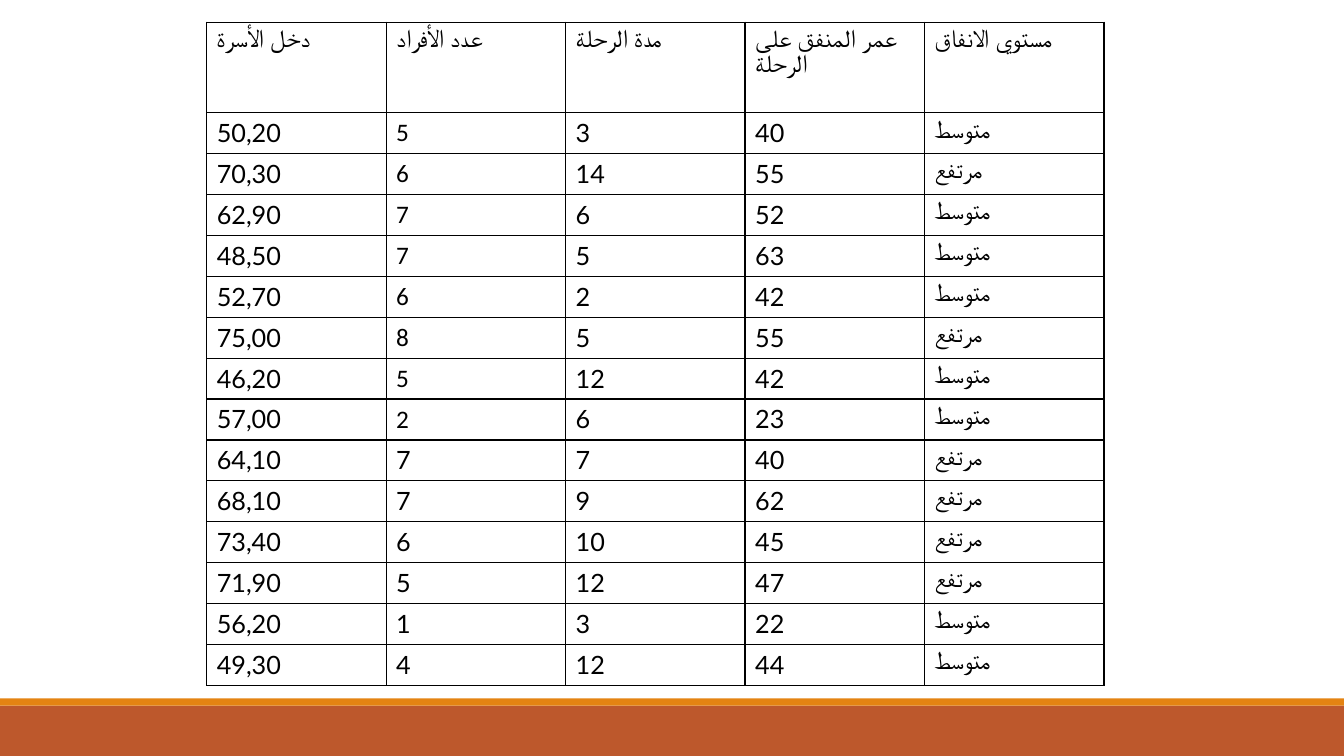
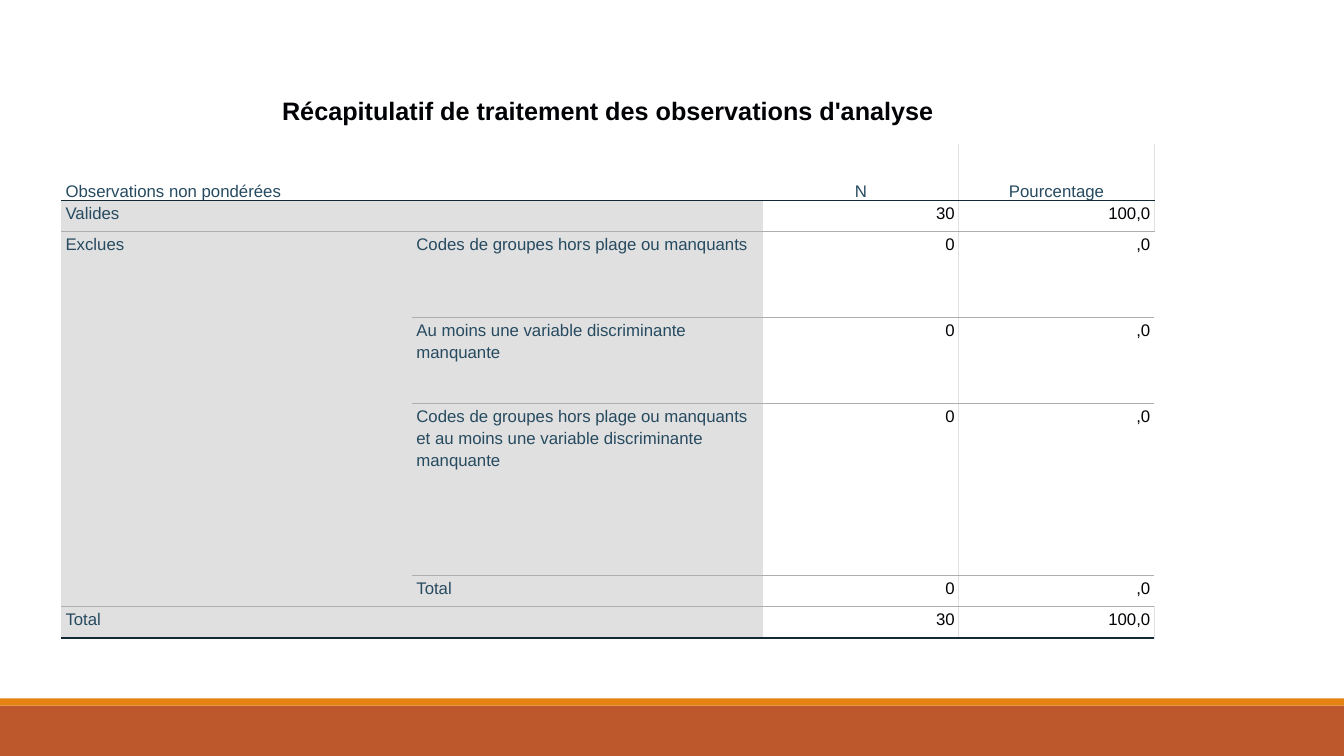
import pptx
import pptx.dml.color
import pptx.enum.shapes
import pptx.enum.text
import pptx.oxml
import pptx.oxml.ns
import pptx.util
from lxml import etree

Inches = pptx.util.Inches
Pt = pptx.util.Pt
qn = pptx.oxml.ns.qn
ALIGN = pptx.enum.text.PP_ALIGN
ANCHOR = pptx.enum.text.MSO_ANCHOR

COLORS = {
    "white": "FFFFFF",
    "black": "000000",
    "band": "BD582C",
    "stripe": "E48312",
    "ink": "010205",
    "label": "264A60",
    "stub": "E0E0E0",
    "rule": "AEAEAE",
    "dark_rule": "152935",
}
PLAIN_TABLE = "{2D5ABB26-0587-4C30-8999-92F81FD0307C}"

TRIP_HEADER = ["دخل الأسرة", "عدد الأفراد", "مدة الرحلة", "عمر المنفق على الرحلة", "مستوي الانفاق"]
MEDIUM, HIGH = "متوسط", "مرتفع"
TRIP_ROWS = [
    ["50,20", "5", "3", "40", MEDIUM],
    ["70,30", "6", "14", "55", HIGH],
    ["62,90", "7", "6", "52", MEDIUM],
    ["48,50", "7", "5", "63", MEDIUM],
    ["52,70", "6", "2", "42", MEDIUM],
    ["75,00", "8", "5", "55", HIGH],
    ["46,20", "5", "12", "42", MEDIUM],
    ["57,00", "2", "6", "23", MEDIUM],
    ["64,10", "7", "7", "40", HIGH],
    ["68,10", "7", "9", "62", HIGH],
    ["73,40", "6", "10", "45", HIGH],
    ["71,90", "5", "12", "47", HIGH],
    ["56,20", "1", "3", "22", MEDIUM],
    ["49,30", "4", "12", "44", MEDIUM],
]
CALIBRI_ROWS = range(1, 9)

SUMMARY_ROWS = [
    ["Récapitulatif de traitement des observations d'analyse", "", "", ""],
    ["Observations non pondérées", "", "N", "Pourcentage"],
    ["Valides", "", "30", "100,0"],
    ["Exclues", "Codes de groupes hors plage ou manquants", "0", ",0"],
    ["", "Au moins une variable discriminante manquante", "0", ",0"],
    ["", "Codes de groupes hors plage ou manquants et au moins une variable discriminante manquante", "0", ",0"],
    ["", "Total", "0", ",0"],
    ["Total", "", "30", "100,0"],
]
SUMMARY_MERGES = [(0, 0, 0, 3), (1, 0, 1, 1), (2, 0, 2, 1), (3, 0, 6, 0), (7, 0, 7, 1)]


def rgb(name):
    return pptx.dml.color.RGBColor.from_string(COLORS[name])


def add_band(s, top, height, color):
    sp = s.shapes.add_shape(pptx.enum.shapes.MSO_SHAPE.RECTANGLE,
                            0, Inches(top), Inches(13.33), Inches(height))
    sp.shadow.inherit = False
    sp.fill.solid()
    sp.fill.fore_color.rgb = rgb(color)
    sp.line.fill.background()
    return sp


def move_bands_to_layout(s):
    layout = s.slide_layout
    for ph in list(layout.placeholders):
        layout.shapes.element.remove(ph.element)
    bands = [add_band(s, 7, 0.5, "band"), add_band(s, 6.93, 0.07, "stripe")]
    for sp in bands:
        layout.shapes.element.append(sp.element)


def add_plain_table(s, left, top, widths, heights):
    frame = s.shapes.add_table(len(heights), len(widths), Inches(left), Inches(top),
                               Inches(sum(widths)), Inches(sum(heights)))
    for style in frame.element.iter(qn("a:tableStyleId")):
        style.text = PLAIN_TABLE
    table = frame.table
    table.first_row = table.horz_banding = False
    for column, width in zip(table.columns, widths):
        column.width = Inches(width)
    for row, height in zip(table.rows, heights):
        row.height = Inches(height)
    return table


def style_cell(cell, fill, borders):
    tcPr = cell._tc.get_or_add_tcPr()
    for side in "LRTB":
        if borders.get(side):
            ln = etree.SubElement(tcPr, qn("a:ln" + side), w=str(Pt(1)))
            solid = etree.SubElement(ln, qn("a:solidFill"))
            etree.SubElement(solid, qn("a:srgbClr"), val=COLORS[borders[side]])
    cell.fill.solid()
    cell.fill.fore_color.rgb = rgb(fill)


def write_cell(cell, text, size, font, color, bold=False):
    cell.text_frame.text = text
    p = cell.text_frame.paragraphs[0]
    for r in p.runs:
        r.font.size = Pt(size)
        r.font.name = font
        r.font.bold = bold
        r.font.color.rgb = rgb(color)
    return p


def build_trip_slide(s):
    heights = [0.9] + [5.68 / len(TRIP_ROWS)] * len(TRIP_ROWS)
    table = add_plain_table(s, 2.05, 0.22, [1.78] * 5, heights)
    for i, row in enumerate([TRIP_HEADER] + TRIP_ROWS):
        for j, text in enumerate(row):
            cell = table.cell(i, j)
            style_cell(cell, "white", dict.fromkeys("LRTB", "black"))
            font = "Calibri" if j == 1 and i in CALIBRI_ROWS else "Lato"
            write_cell(cell, text, 18, font, "black")


def summary_rule(i):
    if i < 2:
        return None
    return "dark_rule" if i in (2, len(SUMMARY_ROWS)) else "rule"


def summary_borders(i, j):
    if j == 0 and 4 <= i <= 6:
        return {}
    borders = {"T": summary_rule(i), "B": summary_rule(i + 1)}
    if i > 0 and j > 1:
        borders["R" if j == 2 else "L"] = "stub"
    return borders


def format_summary_cell(cell, i, j, text):
    is_title, is_head, is_value = i == 0, i == 1, j > 1
    style_cell(cell, "stub" if i > 1 and not is_value else "white", summary_borders(i, j))
    cell.margin_left = cell.margin_right = cell.margin_top = cell.margin_bottom = 0
    cell.vertical_anchor = ANCHOR.MIDDLE if is_title else ANCHOR.BOTTOM if is_head else ANCHOR.TOP
    color = "ink" if is_title or (is_value and not is_head) else "label"
    p = write_cell(cell, text, 18 if is_title else 12, "Arial", color, is_title)
    p.line_spacing = Pt(16)
    if is_title or (is_head and is_value):
        p.alignment = ALIGN.CENTER
    else:
        p.alignment = ALIGN.RIGHT if is_value else ALIGN.LEFT
    pPr = p._p.get_or_add_pPr()
    for side in ("marL", "marR"):
        pPr.set(side, str(Inches(0.04)))


def build_summary_slide(s):
    table = add_plain_table(s, 0.61, 0.84, [3.48, 3.48, 1.94, 1.94],
                            [0.59, 0.56, 0.31, 0.85, 0.85, 1.71, 0.31, 0.31])
    for top, left, bottom, right in SUMMARY_MERGES:
        table.cell(top, left).merge(table.cell(bottom, right))
    for i, row in enumerate(SUMMARY_ROWS):
        for j, text in enumerate(row):
            format_summary_cell(table.cell(i, j), i, j, text)


def main():
    prs = pptx.Presentation()
    prs.slide_width, prs.slide_height = Inches(13.33), Inches(7.5)
    blank = prs.slide_layouts[6]
    trip = prs.slides.add_slide(blank)
    move_bands_to_layout(trip)
    build_trip_slide(trip)
    build_summary_slide(prs.slides.add_slide(blank))
    prs.save("out.pptx")


if __name__ == "__main__":
    main()
